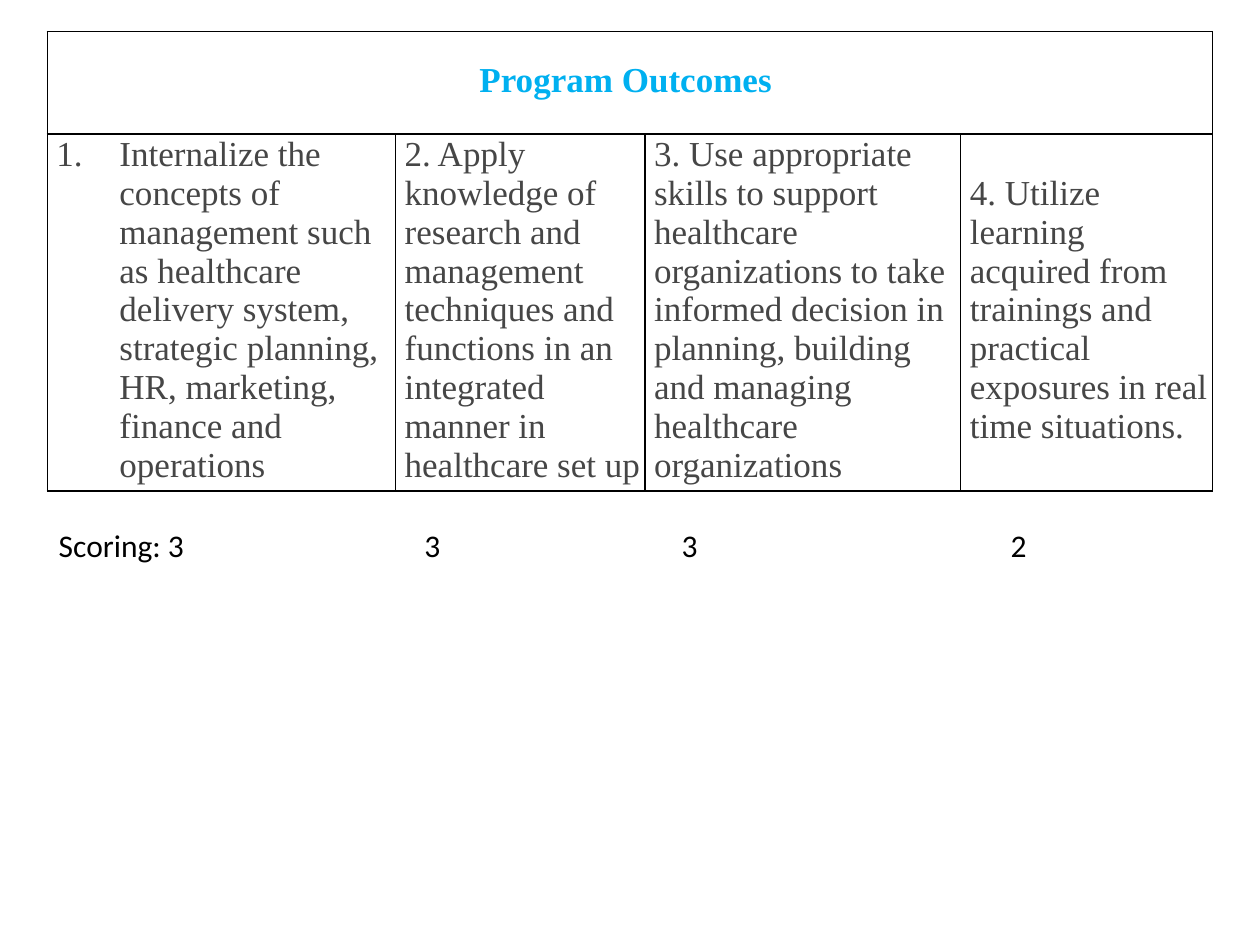
import pptx
import pptx.dml.color
import pptx.enum.text
import pptx.oxml.ns
import pptx.util
from dataclasses import dataclass
from lxml import etree

Pt = pptx.util.Pt
qn = pptx.oxml.ns.qn
ALIGN = pptx.enum.text.PP_ALIGN
ANCHOR = pptx.enum.text.MSO_ANCHOR


@dataclass(frozen=True)
class Theme:
    heading: str = "00B0F0"
    body: str = "464646"
    ink: str = "000000"
    table_font: str = "Times New Roman"
    score_font: str = "Calibri"
    table_size: int = 20
    score_size: int = 18
    border: int = 1


class SlideBuilder:
    def __init__(self, s, theme):
        self.s = s
        self.theme = theme

    def run(self, p, text, font, size, color, bold=False):
        r = p.add_run()
        r.text = text
        r.font.name = font
        r.font.size = Pt(size)
        r.font.bold = bold
        r.font.color.rgb = pptx.dml.color.RGBColor.from_string(color)

    def borders(self, cell):
        props = cell._tc.get_or_add_tcPr()
        for i, side in enumerate(("lnL", "lnR", "lnT", "lnB")):
            line = etree.Element(qn(f"a:{side}"), w=str(Pt(self.theme.border)))
            fill = etree.SubElement(line, qn("a:solidFill"))
            etree.SubElement(fill, qn("a:srgbClr"), val=self.theme.ink)
            props.insert(i, line)

    def number(self, p, indent):
        """Number the paragraph automatically with a hanging indent."""
        props = p._p.get_or_add_pPr()
        props.set("marL", str(Pt(indent)))
        props.set("indent", str(-Pt(indent)))
        etree.SubElement(props, qn("a:buFont"), typeface="+mj-lt")
        etree.SubElement(props, qn("a:buAutoNum"), type="arabicPeriod")

    def cell(self, cell, text, color, left, bold=False):
        """Style and fill a cell, and return its paragraph."""
        cell.fill.background()
        self.borders(cell)
        cell.vertical_anchor = ANCHOR.MIDDLE
        cell.margin_left = Pt(left)
        cell.margin_top = cell.margin_right = Pt(0.75)
        cell.margin_bottom = Pt(3.6)
        p = cell.text_frame.paragraphs[0]
        self.run(p, text, self.theme.table_font, self.theme.table_size, color, bold)
        return p

    def outcome_table(self, x, y, widths, heights, title, outcomes):
        frame = self.s.shapes.add_table(
            len(heights), len(widths), Pt(x), Pt(y), Pt(sum(widths)), Pt(sum(heights)))
        table = frame.table
        table.first_row = table.horz_banding = False
        for column, width in zip(table.columns, widths):
            column.width = Pt(width)
        for row, height in zip(table.rows, heights):
            row.height = Pt(height)
        header = table.cell(0, 0)
        header.merge(table.cell(0, len(widths) - 1))
        for i in range(1, len(widths)):
            self.borders(table.cell(0, i))
        p = self.cell(header, title, self.theme.heading, 0.75, bold=True)
        p.alignment = ALIGN.CENTER
        for i, text in enumerate(outcomes):
            p = self.cell(table.cell(1, i), text, self.theme.body, 5.25)
            if i == 0:
                self.number(p, 36)

    def score_line(self, x, y, w, h, label, scores, stops):
        """Write the scores on one line, each after the first at a tab stop."""
        tf = self.s.shapes.add_textbox(Pt(x), Pt(y), Pt(w), Pt(h)).text_frame
        tf.word_wrap = True
        tf.auto_size = pptx.enum.text.MSO_AUTO_SIZE.SHAPE_TO_FIT_TEXT
        p = tf.paragraphs[0]
        tabs = etree.SubElement(p._p.get_or_add_pPr(), qn("a:tabLst"))
        for stop in stops:
            etree.SubElement(tabs, qn("a:tab"), pos=str(Pt(stop)), algn="l")
        self.run(p, label + "\t".join(scores), self.theme.score_font,
                 self.theme.score_size, self.theme.ink)


def main():
    prs = pptx.Presentation()
    prs.slide_width, prs.slide_height = Pt(720), Pt(540)
    s = prs.slides.add_slide(prs.slide_layouts[6])
    builder = SlideBuilder(s, Theme())
    builder.outcome_table(
        27, 18, [199, 142.5, 180.5, 144], [58.5, 181], "Program Outcomes ",
        ["Internalize the concepts of management such as healthcare delivery system, "
         "strategic planning, HR, marketing, finance and operations",
         "2. Apply knowledge of research and management techniques and functions "
         "in an integrated manner in healthcare set up",
         "3. Use appropriate skills to support healthcare organizations to take "
         "informed decision in planning, building and managing healthcare organizations",
         "4. Utilize learning acquired from trainings and practical exposures "
         "in real time situations."])
    builder.score_line(26.5, 297, 667, 29, "Scoring: ", ["3", "3", "3", "2"],
                       [209, 356, 544])
    prs.save("out.pptx")


if __name__ == "__main__":
    main()
